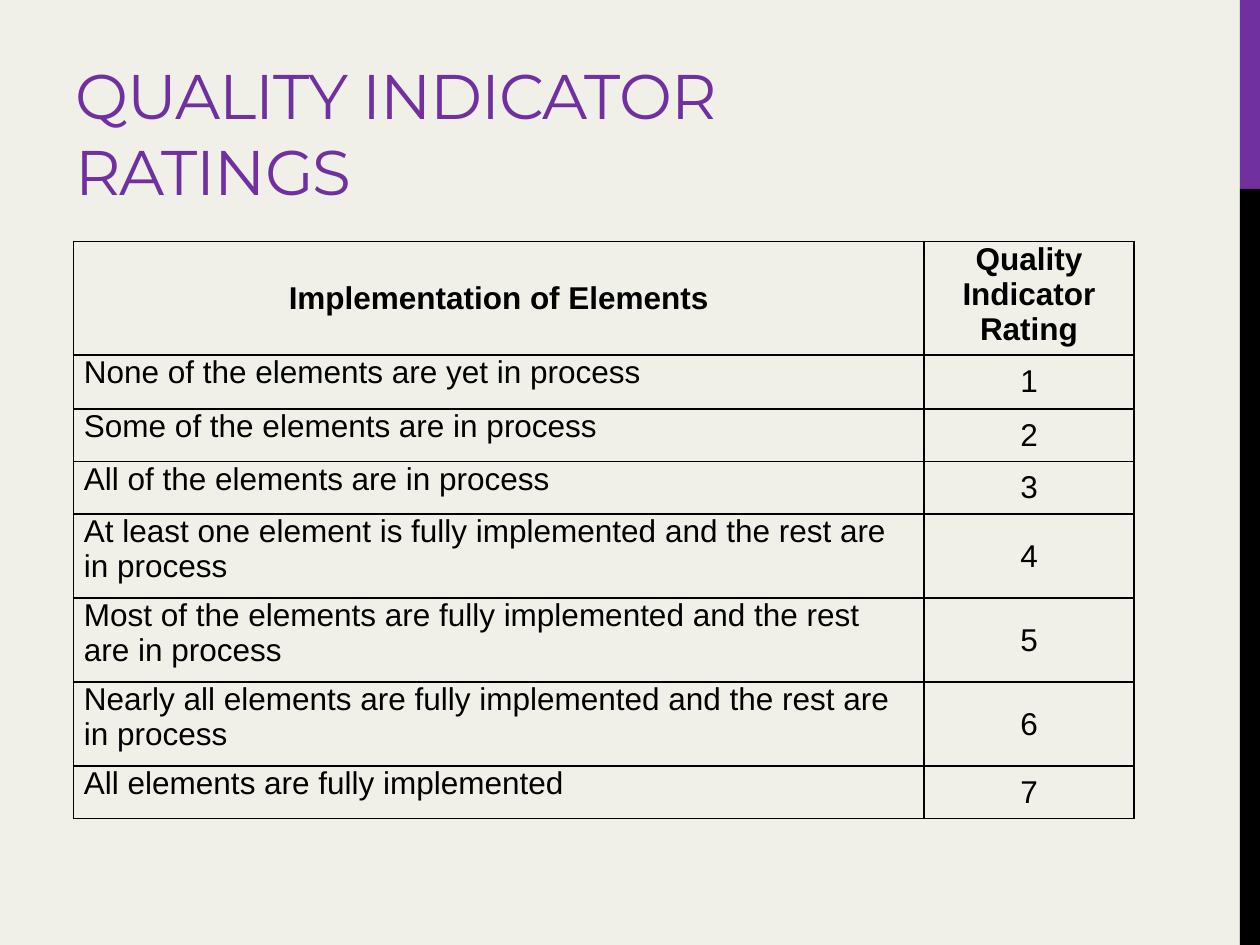
from dataclasses import dataclass

from lxml import etree
from pptx import Presentation
from pptx.dml.color import RGBColor
from pptx.enum.shapes import MSO_SHAPE
from pptx.enum.text import MSO_ANCHOR, PP_ALIGN
from pptx.oxml.ns import qn
from pptx.util import Pt

RECTANGLE = MSO_SHAPE.RECTANGLE
LEFT, CENTER = PP_ALIGN.LEFT, PP_ALIGN.CENTER
TOP, MIDDLE, BOTTOM = MSO_ANCHOR.TOP, MSO_ANCHOR.MIDDLE, MSO_ANCHOR.BOTTOM


@dataclass(frozen=True)
class Theme:
    background: RGBColor = RGBColor(0xF0, 0xF0, 0xE9)
    accent: RGBColor = RGBColor(0x70, 0x30, 0xA0)
    ink: RGBColor = RGBColor(0, 0, 0)
    title_font: str = "Montserrat"
    body_font: str = "Arial"
    title_size: int = 36
    body_size: int = 18
    border_width: int = 1


THEME = Theme()
SLIDE_WIDTH, SLIDE_HEIGHT = 720, 540
BAR_LEFT, BAR_SPLIT = 708.5, 108

HEADERS = ("Implementation of Elements", "Quality Indicator Rating")
RATINGS = (
    "None of the elements are yet in process",
    "Some of the elements are in process",
    "All of the elements are in process",
    "At least one element is fully implemented and the rest are in process",
    "Most of the elements are fully implemented and the rest are in process",
    "Nearly all elements are fully implemented and the rest are in process",
    "All elements are fully implemented",
)
COLUMN_WIDTHS = (486, 120)
ROW_HEIGHTS = (60.5, 31, 30, 30, 48, 48, 48, 30)


def apply_format(target, values):
    for name, value in values.items():
        setattr(target, name, value)


def write_text(paragraph, text, font, size, color, bold=False):
    run = paragraph.add_run()
    run.text = text
    apply_format(run.font, {"name": font, "size": Pt(size), "bold": bold})
    run.font.color.rgb = color
    return run


def add_bar(slide, top, height, color):
    bar = slide.shapes.add_shape(
        RECTANGLE, Pt(BAR_LEFT), Pt(top), Pt(SLIDE_WIDTH - BAR_LEFT), Pt(height)
    )
    bar.shadow.inherit = False
    bar.fill.solid()
    bar.fill.fore_color.rgb = color
    bar.line.fill.background()


def add_title(slide, text):
    box = slide.shapes.add_textbox(Pt(36), Pt(12), Pt(456), Pt(108))
    apply_format(box.text_frame, {
        "word_wrap": True, "vertical_anchor": BOTTOM, "margin_bottom": Pt(1),
    })
    run = write_text(box.text_frame.paragraphs[0], text,
                     THEME.title_font, THEME.title_size, THEME.accent)
    run.font._element.set("spc", "-60")


def add_borders(cell):
    properties = cell._tc.get_or_add_tcPr()
    for position, side in enumerate(("a:lnL", "a:lnR", "a:lnT", "a:lnB")):
        line = etree.Element(qn(side), w=str(Pt(THEME.border_width)))
        fill = etree.SubElement(line, qn("a:solidFill"))
        etree.SubElement(fill, qn("a:srgbClr"), val=str(THEME.ink))
        properties.insert(position, line)


def fill_cell(cell, text, alignment, anchor, spacing=0, bold=False):
    cell.fill.background()
    apply_format(cell, {
        "margin_left": Pt(6), "margin_right": Pt(6),
        "margin_top": 0, "margin_bottom": 0, "vertical_anchor": anchor,
    })
    paragraph = cell.text_frame.paragraphs[0]
    apply_format(paragraph, {
        "alignment": alignment,
        "space_before": Pt(spacing), "space_after": Pt(spacing),
    })
    write_text(paragraph, text, THEME.body_font, THEME.body_size, THEME.ink, bold)
    add_borders(cell)


def add_rating_table(slide):
    table = slide.shapes.add_table(
        len(ROW_HEIGHTS), len(COLUMN_WIDTHS), Pt(42), Pt(138),
        Pt(sum(COLUMN_WIDTHS)), Pt(sum(ROW_HEIGHTS)),
    ).table
    table.horz_banding = False
    for column, width in zip(table.columns, COLUMN_WIDTHS):
        column.width = Pt(width)
    for row, height in zip(table.rows, ROW_HEIGHTS):
        row.height = Pt(height)

    for column, (text, anchor) in enumerate(zip(HEADERS, (MIDDLE, TOP))):
        fill_cell(table.cell(0, column), text, CENTER, anchor, bold=True)
    for rating, description in enumerate(RATINGS, start=1):
        fill_cell(table.cell(rating, 0), description, LEFT, TOP, spacing=6)
        fill_cell(table.cell(rating, 1), str(rating), CENTER, MIDDLE, spacing=3)


def main():
    presentation = Presentation()
    apply_format(presentation, {
        "slide_width": Pt(SLIDE_WIDTH), "slide_height": Pt(SLIDE_HEIGHT),
    })
    slide = presentation.slides.add_slide(presentation.slide_layouts[6])
    slide.background.fill.solid()
    slide.background.fill.fore_color.rgb = THEME.background

    add_bar(slide, 0, BAR_SPLIT, THEME.accent)
    add_bar(slide, BAR_SPLIT, SLIDE_HEIGHT - BAR_SPLIT, THEME.ink)
    add_title(slide, "QUALITY INDICATOR RATINGS")
    add_rating_table(slide)
    presentation.save("out.pptx")


if __name__ == "__main__":
    main()
